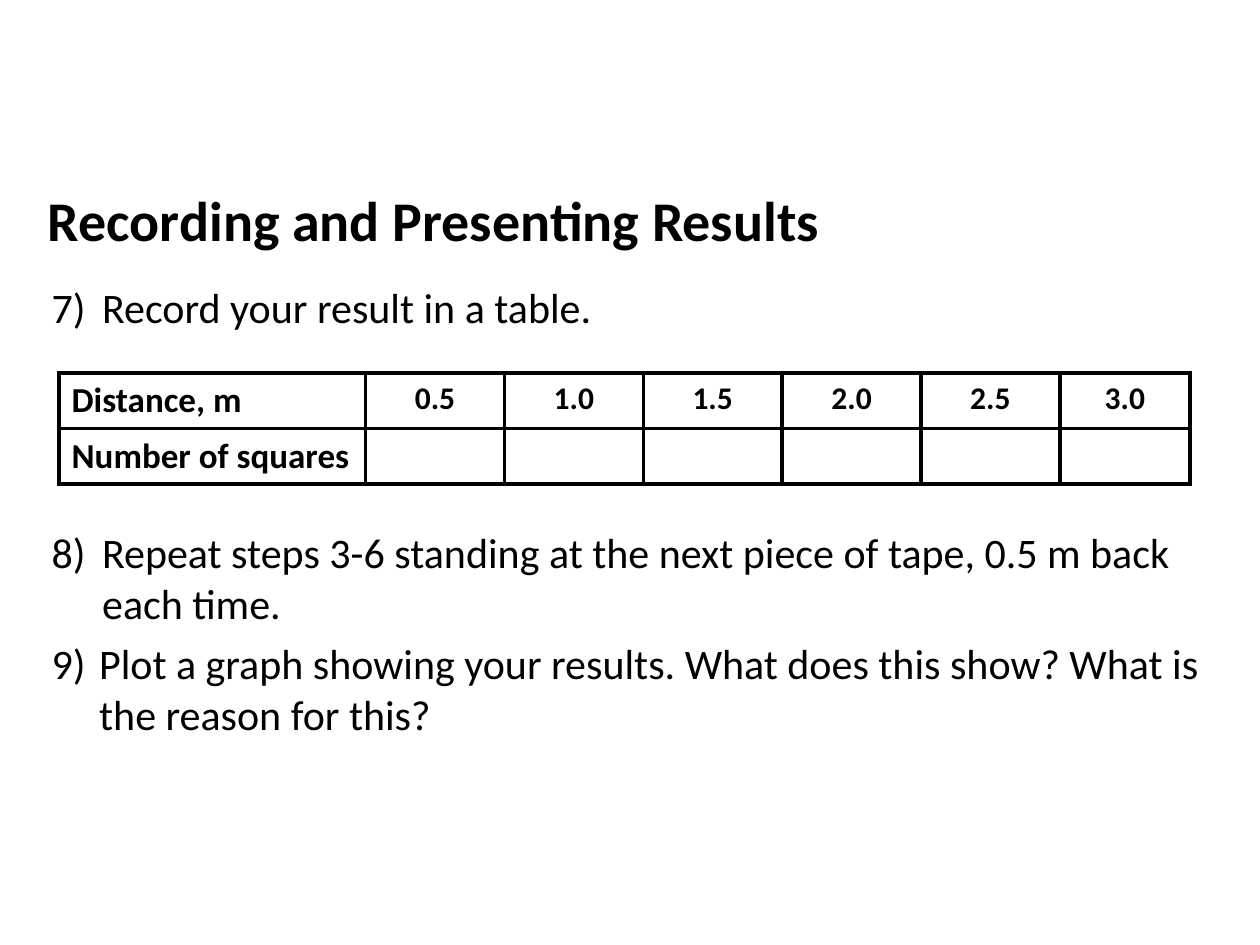
"""Build the slide on recording and presenting results."""
import pptx
import pptx.dml.color
import pptx.enum.text
import pptx.oxml
import pptx.oxml.ns
import pptx.util
from pptx.util import Cm

FONT = "Calibri"
BLACK = "000000"
TITLE = "Recording and Presenting Results"
FIRST_STEP = 7
TABLE_GAP = 105
STEPS = [
    ("Record your result in a table.", 1.02, 0),
    ("Repeat steps 3-6 standing at the next piece of tape, 0.5 m back each time.", 1.02, TABLE_GAP),
    ("Plot a graph showing your results. What does this show? What is the reason for this?", 0.96, 0),
]
ROWS = [
    ["Distance, m", "0.5", "1.0", "1.5", "2.0", "2.5", "3.0"],
    ["Number of squares"] + [""] * 6,
]
COLUMN_WIDTHS = [6.18] + [2.8] * 5 + [2.62]
ROW_HEIGHT = 1.1
BORDER = 2.25


def set_font(font, size, bold=False, colour=BLACK):
    font.name = FONT
    font.size = pptx.util.Pt(size)
    font.bold = bold
    font.color.rgb = pptx.dml.color.RGBColor.from_string(colour)


def add_text(para, text, size, bold=False):
    span = para.add_run()
    span.text = text
    set_font(span.font, size, bold)


def prepare_frame(box):
    frame = box.text_frame
    frame.word_wrap = True
    frame.auto_size = pptx.enum.text.MSO_AUTO_SIZE.NONE
    frame.vertical_anchor = pptx.enum.text.MSO_ANCHOR.TOP
    return frame


def add_title(page):
    title = page.shapes.title
    title.left, title.top, title.width, title.height = Cm(0.71), Cm(3.61), Cm(18.01), Cm(1.63)
    para = prepare_frame(title).paragraphs[0]
    para.alignment = pptx.enum.text.PP_ALIGN.LEFT
    add_text(para, TITLE, 32, True)


def number_paragraph(para, indent):
    properties = para._p.get_or_add_pPr()
    properties.set("marL", str(Cm(indent)))
    properties.set("indent", str(-Cm(indent)))
    number = pptx.oxml.parse_xml(
        f'<a:buAutoNum {pptx.oxml.ns.nsdecls("a")} type="arabicParenR" startAt="{FIRST_STEP}"/>')
    properties.append(number)


def add_steps(page):
    box = page.shapes.add_textbox(Cm(0.79), Cm(5.56), Cm(23.8), Cm(9.53))
    frame = prepare_frame(box)
    for index, (text, indent, gap) in enumerate(STEPS):
        para = frame.add_paragraph() if index else frame.paragraphs[0]
        number_paragraph(para, indent)
        if gap:
            para.space_before = pptx.util.Pt(gap)
        para.space_after = pptx.util.Pt(6)
        add_text(para, text, 24)


def set_borders(cell):
    properties = cell._tc.get_or_add_tcPr()
    for place, side in enumerate("LRTB"):
        properties.insert(place, pptx.oxml.parse_xml(
            f'<a:ln{side} {pptx.oxml.ns.nsdecls("a")} w="{pptx.util.Pt(BORDER)}">'
            f'<a:solidFill><a:srgbClr val="{BLACK}"/></a:solidFill></a:ln{side}>'))


def add_results_table(page):
    frame = page.shapes.add_table(
        len(ROWS), len(COLUMN_WIDTHS), Cm(1.19), Cm(7.52),
        Cm(sum(COLUMN_WIDTHS)), Cm(ROW_HEIGHT * len(ROWS)))
    table = frame.table
    for column, width in zip(table.columns, COLUMN_WIDTHS):
        column.width = Cm(width)
    for row_index, texts in enumerate(ROWS):
        table.rows[row_index].height = Cm(ROW_HEIGHT)
        for column_index, text in enumerate(texts):
            cell = table.cell(row_index, column_index)
            cell.fill.background()
            set_borders(cell)
            para = cell.text_frame.paragraphs[0]
            if column_index:
                para.alignment = pptx.enum.text.PP_ALIGN.CENTER
            if text:
                add_text(para, text, 18 if column_index else 20, True)


def main():
    deck = pptx.Presentation()
    deck.slide_width, deck.slide_height = Cm(25.4), Cm(19.05)
    page = deck.slides.add_slide(deck.slide_layouts[5])
    add_title(page)
    add_steps(page)
    add_results_table(page)
    deck.save("out.pptx")


if __name__ == "__main__":
    main()
